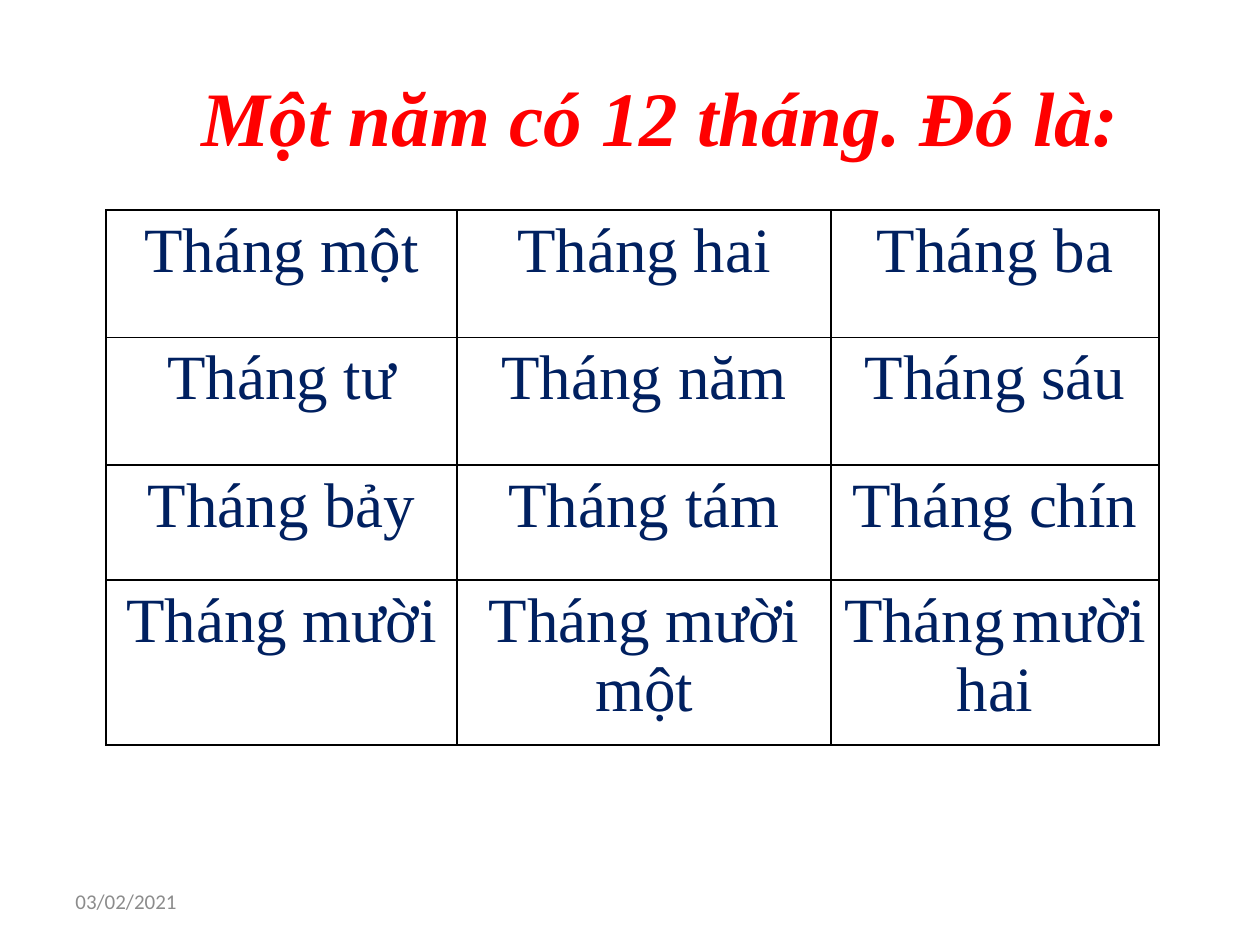
from lxml.etree import SubElement
from pptx import Presentation
from pptx.dml.color import RGBColor
from pptx.enum.text import MSO_ANCHOR, MSO_AUTO_SIZE, PP_ALIGN
from pptx.oxml.ns import qn
from pptx.util import Pt

RED = RGBColor(0xFF, 0x00, 0x00)
NAVY = RGBColor(0x00, 0x20, 0x60)
GREY = RGBColor(0x8C, 0x8C, 0x8C)
BLACK = RGBColor(0x00, 0x00, 0x00)

SERIF = "Times New Roman"
SANS = "Calibri"

COLUMN_WIDTHS = (200.8, 213.6, 187.5)
ROW_HEIGHTS = (72.8, 72.8, 65.8, 94.5)
MONTHS = (
    ("Tháng một", "Tháng hai", "Tháng ba"),
    ("Tháng tư", "Tháng năm", "Tháng sáu"),
    ("Tháng bảy", "Tháng tám", "Tháng chín"),
    ("Tháng mười", "Tháng mười một", "Tháng mười hai"),
)
NARROW_SPACED = "Tháng mười hai"


def add_run(paragraph, text, *, size, font=SERIF, color=NAVY, bold=False, italic=False):
    run = paragraph.add_run()
    run.text = text
    run.font.name = font
    run.font.size = Pt(size)
    run.font.color.rgb = color
    run.font.bold = bold
    run.font.italic = italic


def add_text_box(slide, text, left, top, width, height, *, wrap=True,
                 anchor=MSO_ANCHOR.TOP, auto_size=MSO_AUTO_SIZE.NONE, **text_format):
    shape = slide.shapes.add_textbox(Pt(left), Pt(top), Pt(width), Pt(height))
    frame = shape.text_frame
    frame.word_wrap = wrap
    frame.vertical_anchor = anchor
    frame.auto_size = auto_size
    add_run(frame.paragraphs[0], text, **text_format)


def set_borders(cell, color, width):
    properties = cell._tc.get_or_add_tcPr()
    for position, side in enumerate(("lnL", "lnR", "lnT", "lnB")):
        line = SubElement(properties, qn(f"a:{side}"), w=str(Pt(width)))
        fill = SubElement(line, qn("a:solidFill"))
        SubElement(fill, qn("a:srgbClr"), val=str(color))
        # Borders must precede the cell fill
        properties.insert(position, line)


def fill_cell(cell, text):
    cell.fill.background()
    set_borders(cell, BLACK, 1)
    paragraph = cell.text_frame.paragraphs[0]
    paragraph.alignment = PP_ALIGN.CENTER
    if text != NARROW_SPACED:
        add_run(paragraph, text, size=36)
        return
    # Small spaces let two words fit on the first line
    for index, word in enumerate(text.split()):
        if index:
            add_run(paragraph, " ", size=18, font=SANS)
        add_run(paragraph, word, size=36)


def add_month_table(slide, left, top):
    frame = slide.shapes.add_table(
        len(ROW_HEIGHTS), len(COLUMN_WIDTHS), Pt(left), Pt(top),
        Pt(sum(COLUMN_WIDTHS)), Pt(sum(ROW_HEIGHTS)))
    table = frame.table
    table.first_row = False
    table.horz_banding = False
    for column, width in zip(table.columns, COLUMN_WIDTHS):
        column.width = Pt(width)
    for row, height, months in zip(table.rows, ROW_HEIGHTS, MONTHS):
        row.height = Pt(height)
        for cell, month in zip(row.cells, months):
            fill_cell(cell, month)


def main():
    presentation = Presentation()
    presentation.slide_width = Pt(720)
    presentation.slide_height = Pt(540)
    slide = presentation.slides.add_slide(presentation.slide_layouts[6])

    # Date
    add_text_box(slide, "03/02/2021", 36, 500.5, 168, 28.75,
                 anchor=MSO_ANCHOR.MIDDLE, size=12, font=SANS, color=GREY)

    # Title
    add_text_box(slide, "Một năm có 12 tháng. Đó là:", 108, 36, 553.5, 60.5,
                 wrap=False, auto_size=MSO_AUTO_SIZE.SHAPE_TO_FIT_TEXT,
                 size=44, color=RED, bold=True, italic=True)

    # Months of the year
    add_month_table(slide, 60.5, 120)

    presentation.save("out.pptx")


if __name__ == "__main__":
    main()
